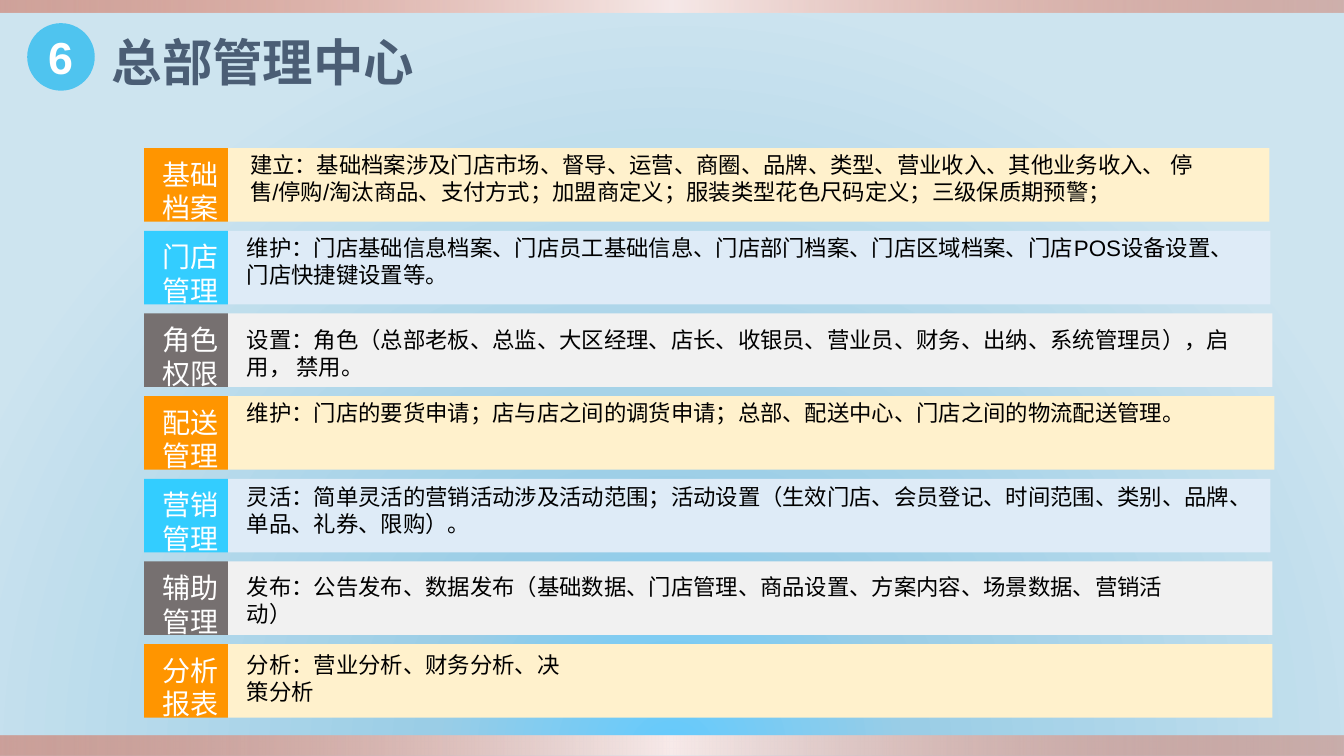
"""Build the headquarters management centre slide."""
from dataclasses import dataclass

from lxml import etree
from pptx import Presentation
from pptx.dml.color import RGBColor
from pptx.enum.shapes import MSO_SHAPE as SHAPE
from pptx.enum.text import MSO_AUTO_SIZE as AUTO, PP_ALIGN as ALIGN
from pptx.oxml import parse_xml
from pptx.oxml.ns import nsdecls, qn
from pptx.util import Inches, Pt

FONT = "Arial"
ROW_TOP, ROW_PITCH, ROW_H = 1.47, 0.82, 0.73
LABEL_X, LABEL_W = 1.43, 0.83
PANEL_X = LABEL_X + LABEL_W
ORANGE, CREAM = "FF9500", "FFF1CC"
CYAN, PALE_BLUE = "33CDFF", "DEEBF7"
GREY, PALE_GREY = "767070", "F1F1F1"


@dataclass
class Row:
    label: str
    text: str
    label_fill: str
    panel_fill: str
    panel_w: float
    text_w: float = 9.84
    text_x: float = 2.45
    text_drop: float = 0.03


@dataclass
class Stop:
    pos: int
    color: str
    alpha: int = 100


ROWS = [
    Row("基础 档案", "建立：基础档案涉及门店市场、督导、运营、商圈、品牌、类型、营业收入、其他业务收入、 "
        "停售/停购/淘汰商品、支付方式；加盟商定义；服装类型花色尺码定义；三级保质期预警；",
        ORANGE, CREAM, 10.33, text_w=9.6, text_x=2.48),
    Row("门店 管理", "维护：门店基础信息档案、门店员工基础信息、门店部门档案、门店区域档案、"
        "门店POS设备设置、 门店快捷键设置等。",
        CYAN, PALE_BLUE, 10.34, text_w=10.03),
    Row("角色 权限", "设置：角色（总部老板、总监、大区经理、店长、收银员、营业员、财务、出纳、"
        "系统管理员），启用， 禁用。",
        GREY, PALE_GREY, 10.36, text_drop=0.13),
    Row("配送 管理", "维护：门店的要货申请；店与店之间的调货申请；总部、配送中心、门店之间的物流配送管理。",
        ORANGE, CREAM, 10.38),
    Row("营销 管理", "灵活：简单灵活的营销活动涉及活动范围；活动设置（生效门店、会员登记、时间范围、"
        "类别、品牌、单品、礼券、限购）。",
        CYAN, PALE_BLUE, 10.34, text_drop=0.04),
    Row("辅助 管理", "发布：公告发布、数据发布（基础数据、门店管理、商品设置、方案内容、场景数据、营销活动）",
        GREY, PALE_GREY, 10.36, text_w=9.26, text_drop=0.12),
    Row("分析 报表", "分析：营业分析、财务分析、决策分析",
        ORANGE, CREAM, 10.36, text_w=3.3, text_drop=0.07),
]
BAR_STOPS = [Stop(0, "D16349", 50), Stop(50, "F7EAE9"), Stop(100, "D16349", 40)]
BG_STOPS = [Stop(0, "63CAFD"), Stop(31, "9ACDE6"), Stop(100, "CDE4EF")]
ACROSS = '<a:lin ang="0" scaled="0"/>'
FROM_BOTTOM = ('<a:path path="circle">'
               '<a:fillToRect l="50000" t="150000" r="50000" b="0"/></a:path>')


def rgb(color: str) -> RGBColor:
    return RGBColor.from_string(color)


def gradient(stops: list[Stop], direction: str):
    marks = "".join(
        f'<a:gs pos="{st.pos * 1000}"><a:srgbClr val="{st.color}">'
        f'<a:alpha val="{st.alpha * 1000}"/></a:srgbClr></a:gs>' for st in stops)
    return parse_xml(f'<a:gradFill {nsdecls("a")} rotWithShape="1">'
                     f'<a:gsLst>{marks}</a:gsLst>{direction}</a:gradFill>')


def add_block(s, kind, x: float, y: float, w: float, h: float, color: str):
    sp = s.shapes.add_shape(kind, Inches(x), Inches(y), Inches(w), Inches(h))
    sp.shadow.inherit = False
    sp.fill.solid()
    sp.fill.fore_color.rgb = rgb(color)
    sp.line.fill.background()
    return sp


def add_bar(s, y: float, h: float) -> None:
    sp = add_block(s, SHAPE.RECTANGLE, 0, y, 13.33, h, "F7EAE9")
    solid = sp.fill._xPr.find(qn("a:solidFill"))
    solid.getparent().replace(solid, gradient(BAR_STOPS, ACROSS))


def add_text(s, x: float, y: float, w: float, h: float, text: str, size: int,
             color: str, bold: bool = False, inset: bool = False,
             align=ALIGN.LEFT) -> None:
    box = s.shapes.add_textbox(Inches(x), Inches(y), Inches(w), Inches(h))
    tf = box.text_frame
    tf.word_wrap = True
    tf.auto_size = AUTO.SHAPE_TO_FIT_TEXT
    if not inset:
        tf.margin_left = tf.margin_right = tf.margin_top = tf.margin_bottom = 0
    p = tf.paragraphs[0]
    p.text = text
    p.alignment = align
    p.font.name = FONT
    p.font.size = Pt(size)
    p.font.bold = bold
    p.font.color.rgb = rgb(color)


def add_heading(s) -> None:
    badge = add_block(s, SHAPE.OVAL, 0.27, 0.23, 0.67, 0.67, "00B0F0")
    tint = badge.fill._xPr.find(qn("a:solidFill"))[0]
    etree.SubElement(tint, qn("a:alpha"), val="61000")
    add_text(s, 0.34, 0.25, 0.52, 0.64, "6", 32, "FFFFFF", True, True, ALIGN.CENTER)
    add_text(s, 1.01, 0.26, 12.32, 1.18, "总部管理中心", 36, "4B5E75", True, True)


def add_row(s, y: float, row: Row) -> None:
    add_block(s, SHAPE.RECTANGLE, PANEL_X, y, row.panel_w, ROW_H, row.panel_fill)
    add_block(s, SHAPE.RECTANGLE, LABEL_X, y, LABEL_W, ROW_H, row.label_fill)
    add_text(s, 1.61, y + 0.09, 0.75, 0.67, row.label, 20, "FFFFFF")
    add_text(s, row.text_x, y + row.text_drop, row.text_w, 0.54, row.text, 16, "000000")


def main() -> None:
    prs = Presentation()
    prs.slide_width, prs.slide_height = Inches(13.33), Inches(7.5)
    s = prs.slides.add_slide(prs.slide_layouts[6])
    s.background.fill.solid()
    bg = s.background.fill._xPr
    bg.replace(bg.find(qn("a:solidFill")), gradient(BG_STOPS, FROM_BOTTOM))
    add_bar(s, 7.3, 0.2)
    add_bar(s, 0, 0.12)
    add_heading(s)
    for i, row in enumerate(ROWS):
        add_row(s, ROW_TOP + i * ROW_PITCH, row)
    prs.save("out.pptx")


if __name__ == "__main__":
    main()
